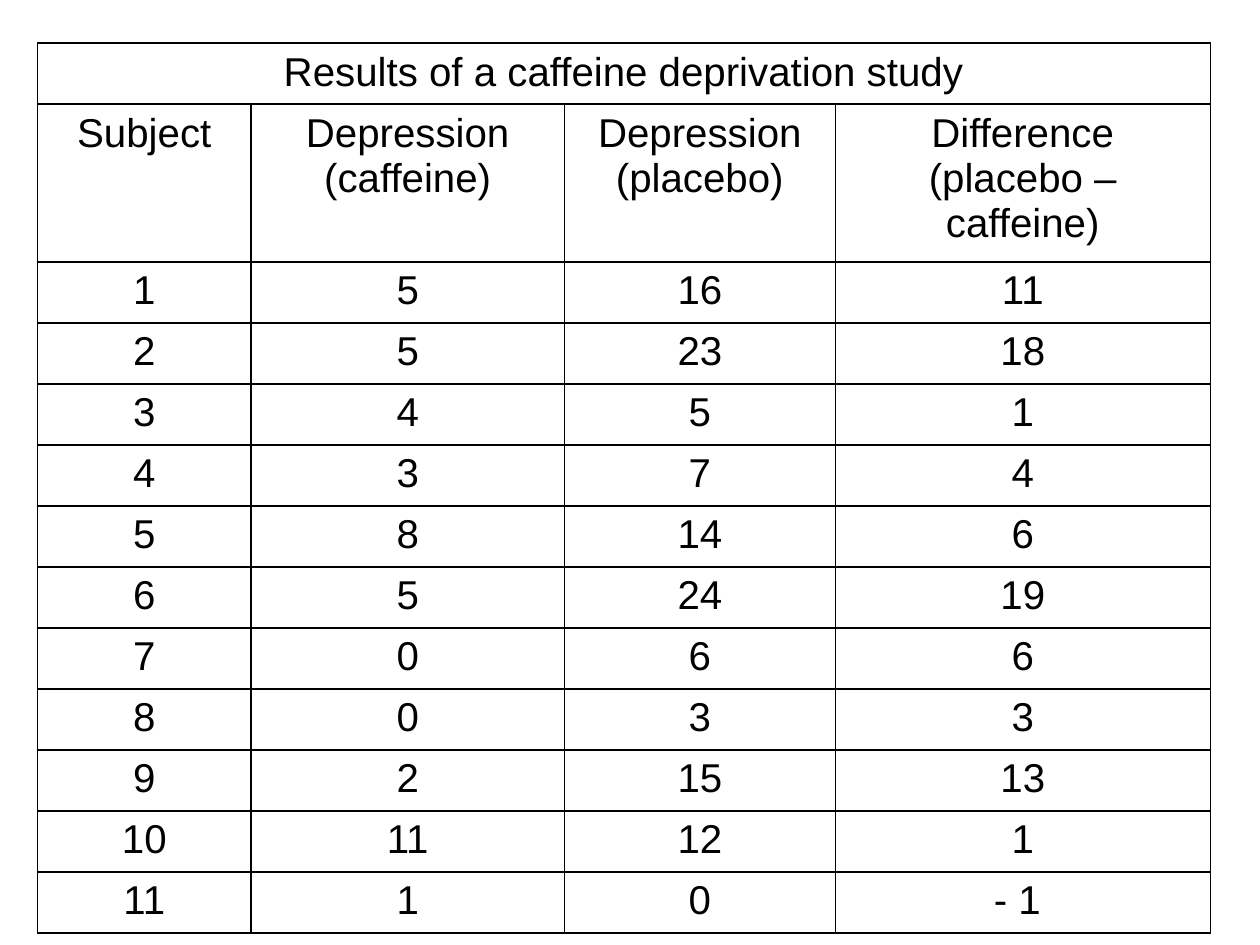
from lxml import etree
from pptx import Presentation
from pptx.dml.color import RGBColor
from pptx.enum.text import PP_ALIGN
from pptx.oxml.ns import qn
from pptx.util import Cm, Pt

CENTER = PP_ALIGN.CENTER

TITLE = "Results of a caffeine deprivation study"
HEADERS = [
    "Subject",
    "Depression (caffeine)",
    "Depression (placebo)",
    "Difference\n(placebo – caffeine)",
]
# caffeine, placebo, difference for subjects 1, 2, 3, ...
SCORES = [
    ("5", "16", "11"),
    ("5", "23", "18"),
    ("4", "5", "1"),
    ("3", "7", "4"),
    ("8", "14", "6"),
    ("5", "24", "19"),
    ("0", "6", "6"),
    ("0", "3", "3"),
    ("2", "15", "13"),
    ("11", "12", "1"),
    ("1", "0", "- 1 "),
]

LEFT, TOP = 0.76, 0.87
COLUMN_WIDTHS = [4.3, 6.32, 5.46, 7.56]
ROW_HEIGHT, HEADER_HEIGHT = 1.23, 3.18
BLACK = "000000"


def color(value):
    return RGBColor.from_string(value)


def write_text(cell, text, font="Arial", size=23, fill=BLACK, align=CENTER):
    cell.text_frame.text = text
    for paragraph in cell.text_frame.paragraphs:
        paragraph.alignment = align
        for run in paragraph.runs:
            run.font.name = font
            run.font.size = Pt(size)
            run.font.color.rgb = color(fill)


def style_cell(cell, border=BLACK, width=1):
    """Clear the cell's fill and draw a line on all four sides."""
    cell.fill.background()
    properties = cell._tc.get_or_add_tcPr()
    for position, side in enumerate(("lnL", "lnR", "lnT", "lnB")):
        line = etree.Element(qn(f"a:{side}"), w=str(Pt(width)))
        solid = etree.SubElement(line, qn("a:solidFill"))
        etree.SubElement(solid, qn("a:srgbClr"), val=border)
        properties.insert(position, line)


def add_results_table(slide):
    subjects = [(str(number), *scores) for number, scores in enumerate(SCORES, 1)]
    rows = [[TITLE], HEADERS, *subjects]
    heights = [ROW_HEIGHT, HEADER_HEIGHT] + [ROW_HEIGHT] * len(subjects)
    table = slide.shapes.add_table(
        len(rows), len(HEADERS), Cm(LEFT), Cm(TOP),
        Cm(sum(COLUMN_WIDTHS)), Cm(sum(heights)),
    ).table
    table.first_row = table.horz_banding = False
    for column, width in zip(table.columns, COLUMN_WIDTHS):
        column.width = Cm(width)
    for row, height, texts in zip(table.rows, heights, rows):
        row.height = Cm(height)
        for cell in row.cells:
            style_cell(cell)
        for cell, text in zip(row.cells, texts):
            write_text(cell, text)
    table.cell(0, 0).merge(table.cell(0, len(HEADERS) - 1))


def main():
    presentation = Presentation()
    presentation.slide_width, presentation.slide_height = Cm(25.4), Cm(19.05)
    slide = presentation.slides.add_slide(presentation.slide_layouts[6])
    add_results_table(slide)
    presentation.save("out.pptx")


if __name__ == "__main__":
    main()
